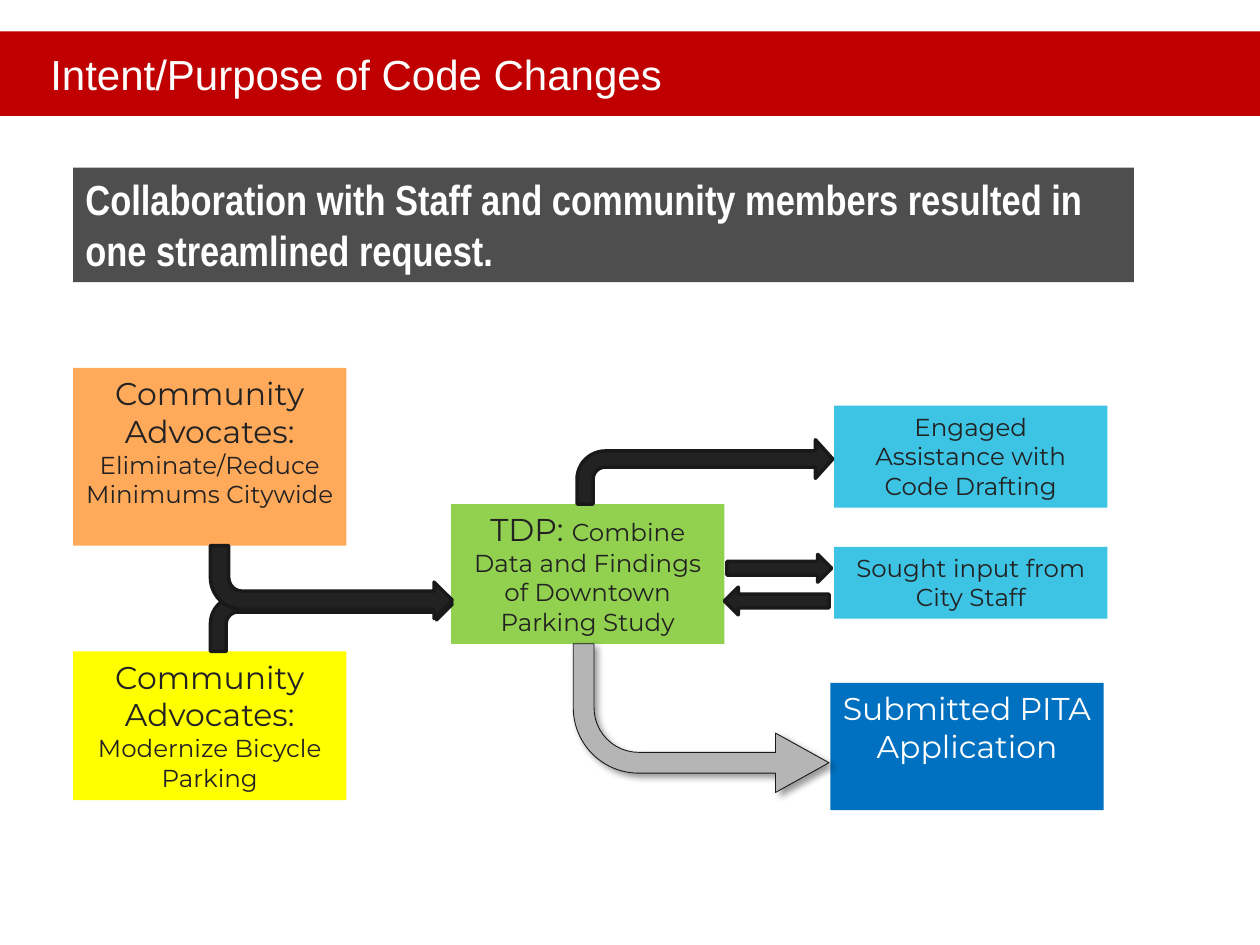
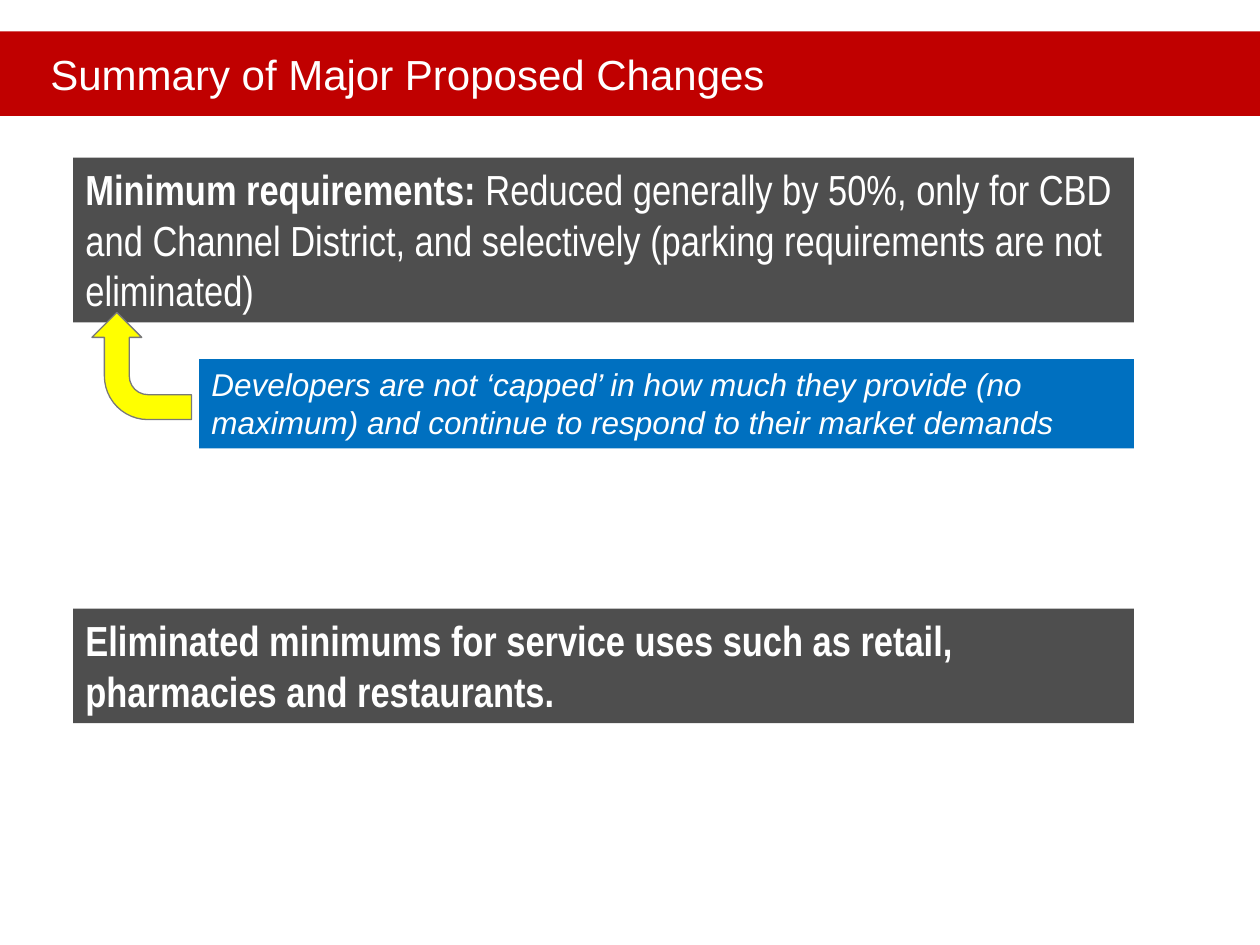
from lxml.etree import SubElement
from pptx import Presentation
from pptx.dml.color import RGBColor
from pptx.enum.shapes import MSO_SHAPE as SHAPE
from pptx.enum.text import MSO_ANCHOR as ANCHOR, PP_ALIGN as ALIGN
from pptx.oxml.ns import qn
from pptx.util import Inches, Pt

COLORS = {
    "red": "C00000", "dark": "222222", "white": "FFFFFF", "orange": "FFA95B",
    "yellow": "FFFF00", "green": "92D050", "cyan": "3DC3E3", "blue": "0070C0",
    "gray": "B5B5B5", "outline": "191919", "mid": "797979", "black": "000000",
}
C = {name: RGBColor.from_string(value) for name, value in COLORS.items()}

LEFT, BAND_W = 0.58, 8.42   # text bands
BOX_W = 2.17                # flow boxes


def add_box(s, runs, x, y, w, h, fill, font="Montserrat", color="dark",
            align=ALIGN.CENTER, anchor=ANCHOR.TOP, margin=0.1, alpha=None):
    """Filled rectangle; runs are (text, size, style), style holding b and/or i."""
    sp = s.shapes.add_shape(SHAPE.RECTANGLE, Inches(x), Inches(y), Inches(w), Inches(h))
    sp.shadow.inherit = False
    sp.line.fill.background()
    sp.fill.solid()
    sp.fill.fore_color.rgb = C[fill]
    if alpha:
        clr = sp._element.spPr.find(qn("a:solidFill"))[0]
        SubElement(clr, qn("a:alpha"), val=str(alpha * 1000))
    tf = sp.text_frame
    tf.word_wrap = True
    tf.vertical_anchor = anchor
    tf.margin_left = Inches(margin)
    p = tf.paragraphs[0]
    p.alignment = align
    for text, size, style in runs:
        r = p.add_run()
        r.text = text
        r.font.name = font
        r.font.size = Pt(size)
        r.font.bold = "b" in style
        r.font.italic = "i" in style
        r.font.color.rgb = C[color]
    return sp


def add_arrow(s, kind, x, y, w, h, fill="dark", line="outline", width=2,
              adj=(), flip=False, rotation=0):
    sp = s.shapes.add_shape(kind, Inches(x), Inches(y), Inches(w), Inches(h))
    sp.shadow.inherit = False
    sp.fill.solid()
    sp.fill.fore_color.rgb = C[fill]
    sp.line.color.rgb = C[line]
    sp.line.width = Pt(width)
    sp.rotation = rotation
    for i, value in enumerate(adj):
        sp.adjustments[i] = value
    if flip:
        sp._element.spPr.find(qn("a:xfrm")).set("flipV", "1")
    return sp


prs = Presentation()
prs.slide_width, prs.slide_height = Inches(10), Inches(7.5)

# Shared formats
title_style = dict(x=0, y=0.25, w=10, h=0.67, fill="red", font="Arial", color="white",
                   align=ALIGN.LEFT, anchor=ANCHOR.MIDDLE, margin=0.4)
band_style = dict(x=LEFT, w=BAND_W, fill="dark", font="Arial Narrow", color="white",
                  align=ALIGN.LEFT, alpha=80)

# Slides with their title bars
slides = []
for title in ("Intent/Purpose of Code Changes", "Summary of Major Proposed Changes"):
    s = prs.slides.add_slide(prs.slide_layouts[6])
    add_box(s, [(title, 24, "")], **title_style)
    slides.append(s)
flow, summary = slides

# Dark statement bands
for s, y, h, runs in (
    (flow, 1.33, 0.91, [("Collaboration with Staff and community members resulted in "
                         "one streamlined request.", 24, "b")]),
    (summary, 1.25, 1.31, [("Minimum requirements: ", 24, "b"),
                           ("Reduced generally by 50%, only for CBD and Channel District, and "
                            "selectively (parking requirements are not eliminated)", 24, "")]),
    (summary, 4.83, 0.91, [("Eliminated minimums for service uses such as retail, "
                            "pharmacies and restaurants.", 24, "b")]),
):
    add_box(s, runs, y=y, h=h, **band_style)

# Slide 1: flow boxes (x, y, height, fill, text colour, large text, small text)
for x, y, h, fill, color, large, small in (
    (LEFT, 2.92, 1.41, "orange", "dark", "Community Advocates: ",
     "Eliminate/Reduce Minimums Citywide"),
    (LEFT, 5.17, 1.18, "yellow", "dark", "Community Advocates: ", "Modernize Bicycle Parking"),
    (3.58, 4, 1.11, "green", "dark", "TDP: ",
     "Combine Data and Findings of Downtown Parking Study"),
    (6.62, 3.22, 0.81, "cyan", "dark", "", "Engaged Assistance with Code Drafting"),
    (6.62, 4.34, 0.57, "cyan", "dark", "", "Sought input from City Staff"),
    (6.59, 5.42, 1.01, "blue", "white", "Submitted PITA Application", ""),
):
    runs = [(text, size, "") for text, size in ((large, 18), (small, 14)) if text]
    add_box(flow, runs, x, y, BOX_W, h, fill, color=color)

# Slide 1: arrows between the boxes
add_arrow(flow, SHAPE.BENT_ARROW, 1.67, 4.67, 1.92, 0.5)
add_arrow(flow, SHAPE.BENT_ARROW, 1.67, 4.33, 1.92, 0.58, flip=True)
add_arrow(flow, SHAPE.BENT_ARROW, 4.58, 3.49, 2.03, 0.51, adj=(0.25, 0.3, 0.27, 0.44))
add_arrow(flow, SHAPE.LEFT_ARROW, 5.75, 4.66, 0.83, 0.22)
add_arrow(flow, SHAPE.RIGHT_ARROW, 5.77, 4.4, 0.83, 0.22)
submit = add_arrow(flow, SHAPE.BENT_ARROW, 4.55, 5.11, 2.03, 1.18, fill="gray", width=0.5,
                   adj=(0.14, 0.2, 0.36, 0.44), flip=True)

# Soft shadow under the submission arrow
effects = submit._element.spPr.find(qn("a:effectLst"))
shadow = SubElement(effects, qn("a:outerShdw"), blurRad=str(Pt(4)), dist=str(Pt(3)),
                    dir=str(45 * 60000), rotWithShape="0")
clr = SubElement(shadow, qn("a:srgbClr"), val=COLORS["black"])
SubElement(clr, qn("a:alpha"), val="40000")

# Slide 2: remark pointing up to the first band
add_box(summary, [("Developers are not ‘capped’ in how much they provide (no maximum) and "
                   "continue to respond to their market demands", 18, "i")],
        1.58, 2.85, 7.42, 0.71, "blue", font="Arial", color="white", align=ALIGN.LEFT)
add_arrow(summary, SHAPE.BENT_ARROW, 0.7, 2.51, 0.85, 0.79, fill="yellow", line="mid",
          width=0.75, rotation=270)

prs.save("out.pptx")
